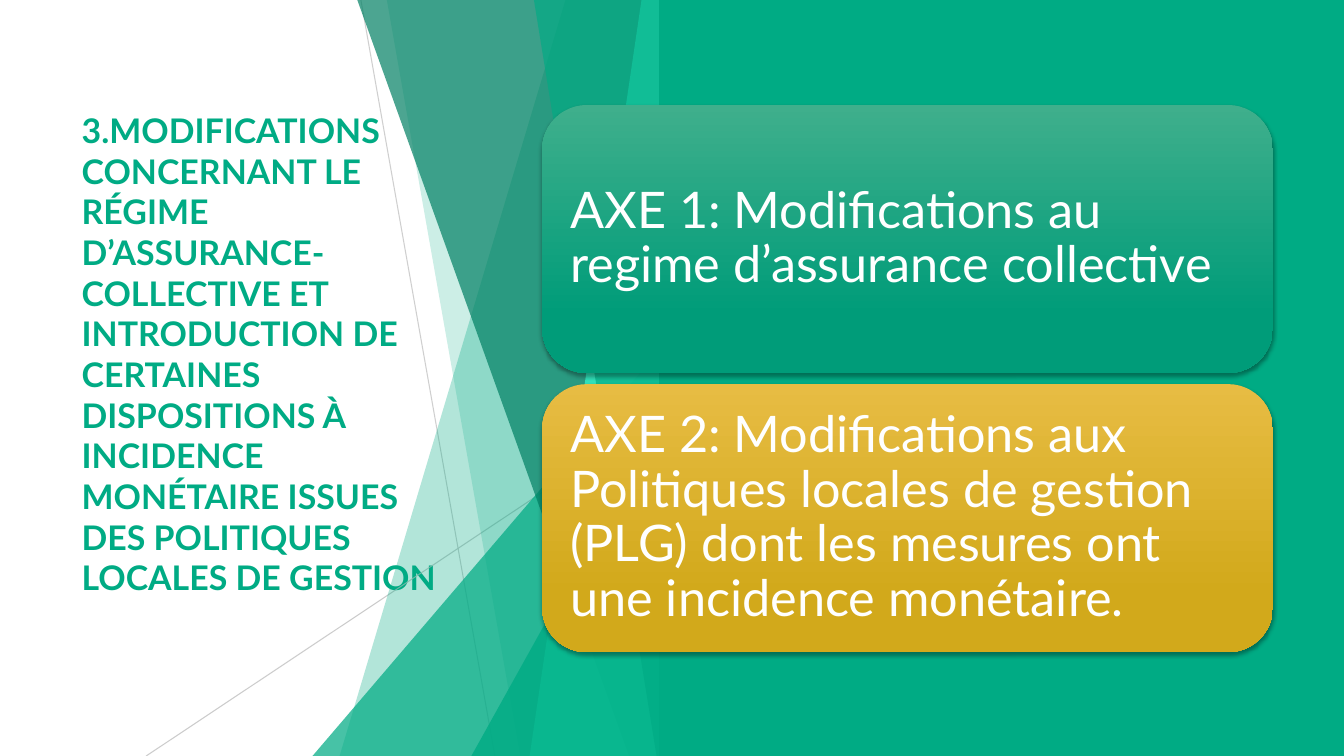
"""Builds the slide presenting the two axes of the collective insurance changes."""
from dataclasses import dataclass

from lxml.etree import SubElement
from pptx import Presentation
from pptx.dml.color import RGBColor
from pptx.enum.shapes import MSO_CONNECTOR as Connector, MSO_SHAPE as Preset
from pptx.enum.text import MSO_ANCHOR as Anchor, MSO_AUTO_SIZE as AutoSize, PP_ALIGN as Align
from pptx.oxml.ns import qn
from pptx.shapes.autoshape import Shape
from pptx.slide import Slide
from pptx.text.text import TextFrame
from pptx.util import Pt


@dataclass(frozen=True)
class Theme:
    font: str = "Lato"
    green: str = "00AB84"
    deep: str = "008063"
    mint: str = "34FFD1"
    rule: str = "BFBFBF"
    white: str = "FFFFFF"
    shadow: str = "000000"
    title_size: float = 24.2
    card_size: float = 36


@dataclass(frozen=True)
class Ray:
    start: tuple[float, float]
    end: tuple[float, float]
    opacity: int


@dataclass(frozen=True)
class Facet:
    """A quadrilateral whose left edge runs from head to foot."""
    head: float
    foot: float
    color: str
    opacity: int


@dataclass(frozen=True)
class Wedge:
    """A triangle whose apex is on the right edge."""
    left: float
    top: float
    color: str
    opacity: int


@dataclass(frozen=True)
class Card:
    text: str
    light: str
    dark: str


THEME = Theme()
WIDTH, HEIGHT = 960, 540
FACET_TOP, FACET_RIGHT = -0.6, 479.7
PANEL_LEFT = 470.9
CARD_LEFT, CARD_TOP, CARD_WIDTH, CARD_HEIGHT, CARD_PITCH = 387.2, 75, 522, 191.5, 199.4
TITLE = (
    "3.MODIFICATIONS CONCERNANT LE RÉGIME D’ASSURANCE-COLLECTIVE ET INTRODUCTION DE "
    "CERTAINES DISPOSITIONS À INCIDENCE MONÉTAIRE ISSUES DES POLITIQUES LOCALES DE GESTION"
)
RAYS = (
    Ray((257.8, 0), (353.5, HEIGHT), 75),
    Ray((FACET_RIGHT, 290.2), (104.4, HEIGHT), 80),
)
FACETS = (
    Facet(404.1, 242.6, THEME.green, 30),
    Facet(276.2, 371.6, THEME.green, 20),
    Wedge(223.2, 240, THEME.green, 72),
    Facet(255, 449.3, THEME.deep, 70),
    Facet(458.3, 378.3, THEME.mint, 70),
    Facet(381.3, 469, THEME.green, 65),
    Wedge(336.7, 283, THEME.green, 80),
)
CARDS = (
    Card("AXE 1: Modifications au regime d’assurance collective", "3FAF8C", "009C79"),
    Card(
        "AXE 2: Modifications aux Politiques locales de gestion (PLG) "
        "dont les mesures ont une incidence monétaire.",
        "E7BC43", "D2A91B",
    ),
)


def rgb(color: str) -> RGBColor:
    """Convert a hexadecimal colour."""
    return RGBColor.from_string(color)


def set_opacity(shape, opacity: int) -> None:
    """Make the first solid colour of a shape translucent."""
    color = next(shape._element.spPr.iter(qn("a:srgbClr")))
    SubElement(color, qn("a:alpha"), val=str(opacity * 1000))


def paint(shape: Shape, color: str, opacity: int = 100) -> None:
    """Give a shape a flat fill without outline or shadow."""
    shape.shadow.inherit = False
    shape.line.fill.background()
    shape.fill.solid()
    shape.fill.fore_color.rgb = rgb(color)
    if opacity < 100:
        set_opacity(shape, opacity)


def write(frame: TextFrame, text: str, size: float, color: str, bold: bool = False) -> None:
    """Fill a frame with one left-aligned, vertically centred paragraph."""
    frame.text = text
    frame.word_wrap = True
    frame.auto_size = AutoSize.NONE
    frame.vertical_anchor = Anchor.MIDDLE
    para = frame.paragraphs[0]
    para.alignment = Align.LEFT
    font = para.runs[0].font
    font.name, font.size, font.bold = THEME.font, Pt(size), bold
    font.color.rgb = rgb(color)


def draw_title(slide: Slide) -> None:
    """Place the title in the left column."""
    title = slide.shapes.title
    title.left, title.top, title.width, title.height = Pt(51.1), Pt(108.7), Pt(279.4), Pt(322.6)
    write(title.text_frame, TITLE, THEME.title_size, THEME.green, bold=True)
    title.text_frame.margin_bottom = Pt(38.6)


def draw_ray(slide: Slide, ray: Ray) -> None:
    """Draw one thin grey line."""
    line = slide.shapes.add_connector(
        Connector.STRAIGHT, *(Pt(value) for value in ray.start + ray.end))
    line.line.width = Pt(0.75)
    line.line.color.rgb = rgb(THEME.rule)
    set_opacity(line, ray.opacity)
    SubElement(line._element.spPr, qn("a:effectLst"))


def draw_facet(slide: Slide, facet: Facet | Wedge) -> None:
    """Draw one translucent facet or wedge."""
    if isinstance(facet, Wedge):
        shape = slide.shapes.add_shape(
            Preset.ISOSCELES_TRIANGLE, Pt(facet.left), Pt(facet.top),
            Pt(FACET_RIGHT - facet.left), Pt(HEIGHT - facet.top))
        shape.adjustments[0] = 1
    else:
        outline = slide.shapes.build_freeform(Pt(facet.head), Pt(FACET_TOP))
        corners = ((FACET_RIGHT, FACET_TOP), (FACET_RIGHT, HEIGHT), (facet.foot, HEIGHT))
        outline.add_line_segments([(Pt(x), Pt(y)) for x, y in corners])
        shape = outline.convert_to_shape()
    paint(shape, facet.color, facet.opacity)


def draw_panel(slide: Slide) -> None:
    """Fill the right half of the slide."""
    panel = slide.shapes.add_shape(
        Preset.RECTANGLE, Pt(PANEL_LEFT), Pt(0), Pt(WIDTH - PANEL_LEFT), Pt(HEIGHT))
    paint(panel, THEME.green)


def draw_card(slide: Slide, card: Card, row: int) -> None:
    """Draw one shaded card with a soft shadow."""
    box = slide.shapes.add_shape(
        Preset.ROUNDED_RECTANGLE, Pt(CARD_LEFT), Pt(CARD_TOP + row * CARD_PITCH),
        Pt(CARD_WIDTH), Pt(CARD_HEIGHT))
    box.line.fill.background()
    box.fill.gradient()
    box.fill.gradient_angle = 270
    for stop, color, position in zip(box.fill.gradient_stops, (card.light, card.dark), (0, 0.78)):
        stop.color.rgb = rgb(color)
        stop.position = position
    box.shadow.inherit = False
    effects = box._element.spPr.find(qn("a:effectLst"))
    shadow = SubElement(effects, qn("a:outerShdw"), blurRad=str(Pt(3)), dist=str(Pt(2)),
                        dir="5400000", rotWithShape="0")
    color = SubElement(shadow, qn("a:srgbClr"), val=THEME.shadow)
    SubElement(color, qn("a:alpha"), val="35000")
    frame = box.text_frame
    write(frame, card.text, THEME.card_size, THEME.white)
    frame.paragraphs[0].line_spacing = 0.9
    frame.margin_left = frame.margin_right = frame.margin_top = frame.margin_bottom = Pt(10.8)


def main() -> None:
    """Build and save the deck."""
    deck = Presentation()
    deck.slide_width, deck.slide_height = Pt(WIDTH), Pt(HEIGHT)
    slide = deck.slides.add_slide(deck.slide_layouts[5])
    draw_title(slide)
    for ray in RAYS:
        draw_ray(slide, ray)
    for facet in FACETS:
        draw_facet(slide, facet)
    draw_panel(slide)
    for row, card in enumerate(CARDS):
        draw_card(slide, card, row)
    deck.save("out.pptx")


if __name__ == "__main__":
    main()
